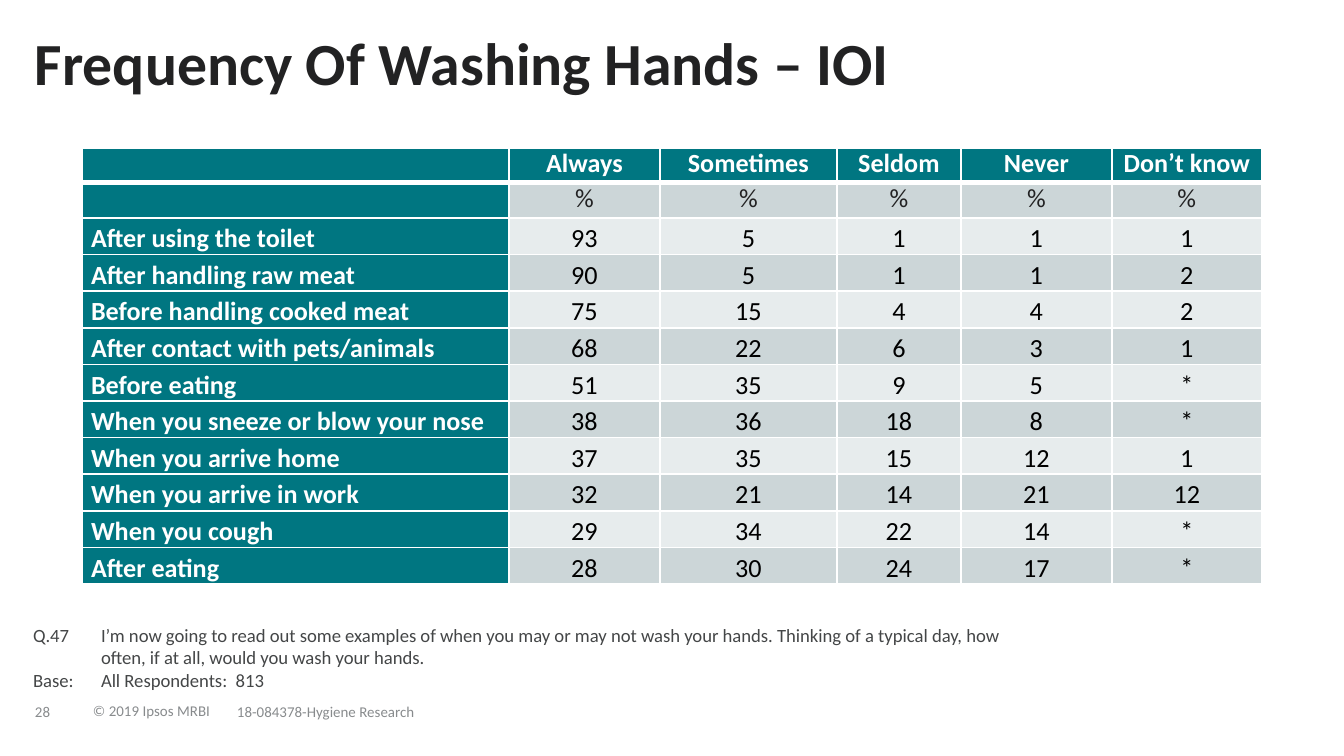
from lxml import etree
from pptx import Presentation
from pptx.dml.color import RGBColor
from pptx.enum.text import MSO_ANCHOR, MSO_AUTO_SIZE, PP_ALIGN
from pptx.oxml.ns import qn
from pptx.util import Pt

PX = 914400 / 134.4
FONT = "Calibri"
TEAL = RGBColor(0x00, 0x76, 0x81)
BAND_DARK = RGBColor(0xCC, 0xD6, 0xD8)
BAND_LIGHT = RGBColor(0xE7, 0xEC, 0xED)
WHITE = RGBColor(0xFF, 0xFF, 0xFF)
BLACK = RGBColor(0x00, 0x00, 0x00)
INK = RGBColor(0x22, 0x22, 0x23)
NOTE_GREY = RGBColor(0x44, 0x46, 0x47)
FOOTER_GREY = RGBColor(0x88, 0x8B, 0x8D)
LEFT, CENTER = PP_ALIGN.LEFT, PP_ALIGN.CENTER
TOP, MIDDLE, BOTTOM = MSO_ANCHOR.TOP, MSO_ANCHOR.MIDDLE, MSO_ANCHOR.BOTTOM
NO_FIT, GROW = MSO_AUTO_SIZE.NONE, MSO_AUTO_SIZE.SHAPE_TO_FIT_TEXT

COLUMN_WIDTHS = [427, 151, 177, 124, 151, 150]
ROW_HEIGHT = 35
ROWS = [
    ["", "Always", "Sometimes", "Seldom", "Never", "Don’t know"],
    ["", "%", "%", "%", "%", "%"],
    ["After using the toilet", "93", "5", "1", "1", "1"],
    ["After handling raw meat", "90", "5", "1", "1", "2"],
    ["Before handling cooked meat", "75", "15", "4", "4", "2"],
    ["After contact with pets/animals", "68", "22", "6", "3", "1"],
    ["Before eating", "51", "35", "9", "5", "*"],
    ["When you sneeze or blow your nose", "38", "36", "18", "8", "*"],
    ["When you arrive home", "37", "35", "15", "12", "1"],
    ["When you arrive in work", "32", "21", "14", "21", "12"],
    ["When you cough", "29", "34", "22", "14", "*"],
    ["After eating", "28", "30", "24", "17", "*"],
]
QUESTION = [
    "Q.47\tI’m now going to read out some examples of when you may or may not "
    "wash your hands. Thinking of a typical day, how often, if at all, would "
    "you wash your hands.",
    "Base:\tAll Respondents:  813",
]
FOOTERS = [
    ("28", 35, 695, 46, 35),
    ("© 2019 Ipsos MRBI", 93, 700, 102, 24),
    ("18-084378-Hygiene Research", 237, 692, 366, 42),
]


def px(n):
    return round(n * PX)


class Deck:
    """Holds the text style and the current slide."""

    def __init__(self, slide):
        self.s = slide

    def style(self, p, size, color, bold=False, align=LEFT, spacing=1.0):
        p.alignment = align
        p.line_spacing = spacing
        p.space_before = Pt(0)
        for r in p.runs:
            r.font.name = FONT
            r.font.size = Pt(size)
            r.font.bold = bold
            r.font.color.rgb = color

    def place(self, sp, x, y, w, h, anchor, wrap=True, fit=NO_FIT):
        sp.left, sp.top, sp.width, sp.height = map(px, (x, y, w, h))
        tf = sp.text_frame
        tf.margin_left = tf.margin_right = tf.margin_top = tf.margin_bottom = 0
        tf.vertical_anchor = anchor
        tf.word_wrap = wrap
        tf.auto_size = fit
        return tf

    def title(self, text, *box):
        tf = self.place(self.s.shapes.title, *box, MIDDLE, fit=GROW)
        tf.text = text
        self.style(tf.paragraphs[0], 32, INK, True, spacing=0.9)

    def notes(self, lines, hang, *box):
        """Fills the body with lines whose label hangs left of the text."""
        tf = self.place(self.s.placeholders[1], *box, BOTTOM)
        tf.text = "\n".join(lines)
        for p in tf.paragraphs:
            self.style(p, 10, NOTE_GREY)
            pPr = p._p.get_or_add_pPr()
            pPr.set("marL", str(px(hang)))
            pPr.set("indent", str(-px(hang)))
            etree.SubElement(pPr, qn("a:buNone"))

    def footer(self, text, *box):
        sp = self.s.shapes.add_textbox(0, 0, 0, 0)
        tf = self.place(sp, *box, MIDDLE, wrap=False)
        tf.text = text
        self.style(tf.paragraphs[0], 8, FOOTER_GREY, spacing=0.85)

    def borders(self, cell, bottom):
        tcPr = cell._tc.get_or_add_tcPr()
        for i, side in enumerate("LRTB"):
            width = bottom if side == "B" else 1
            ln = etree.Element(qn(f"a:ln{side}"), w=str(Pt(width)))
            fill = etree.SubElement(ln, qn("a:solidFill"))
            etree.SubElement(fill, qn("a:srgbClr"), val=str(WHITE))
            tcPr.insert(i, ln)

    def cell(self, cell, text, row, col):
        head = row == 0 or col == 0
        band = BAND_DARK if row % 2 else BAND_LIGHT
        cell.fill.solid()
        cell.fill.fore_color.rgb = TEAL if head else band
        cell.margin_left = cell.margin_right = px(9)
        cell.margin_top = cell.margin_bottom = 0
        cell.vertical_anchor = MIDDLE if row > 1 else TOP
        cell.text = text
        p = cell.text_frame.paragraphs[0]
        color = WHITE if head else INK if row == 1 else BLACK
        self.style(p, 14, color, head, CENTER if col else LEFT,
                   1.15 if row > 1 else 1.0)
        if not text:
            p._p.get_or_add_endParaRPr().set("sz", "1400")
        self.borders(cell, 1 if row else 3)

    def table(self, rows, widths, row_height, x, y):
        frame = self.s.shapes.add_table(
            len(rows), len(widths), px(x), px(y),
            px(sum(widths)), px(row_height * len(rows)))
        tbl = frame.table
        for column, width in zip(tbl.columns, widths):
            column.width = px(width)
        for i, values in enumerate(rows):
            tbl.rows[i].height = px(row_height)
            for j, text in enumerate(values):
                self.cell(tbl.cell(i, j), text, i, j)


def main():
    prs = Presentation()
    prs.slide_width, prs.slide_height = px(1344), px(756)
    deck = Deck(prs.slides.add_slide(prs.slide_layouts[1]))
    for footer in FOOTERS:
        deck.footer(*footer)
    deck.title("Frequency Of Washing Hands – IOI", 35, 34, 1068, 64)
    deck.notes(QUESTION, 68, 33, 571, 988, 120)
    deck.table(ROWS, COLUMN_WIDTHS, ROW_HEIGHT, 82, 148)
    prs.save("out.pptx")


if __name__ == "__main__":
    main()
